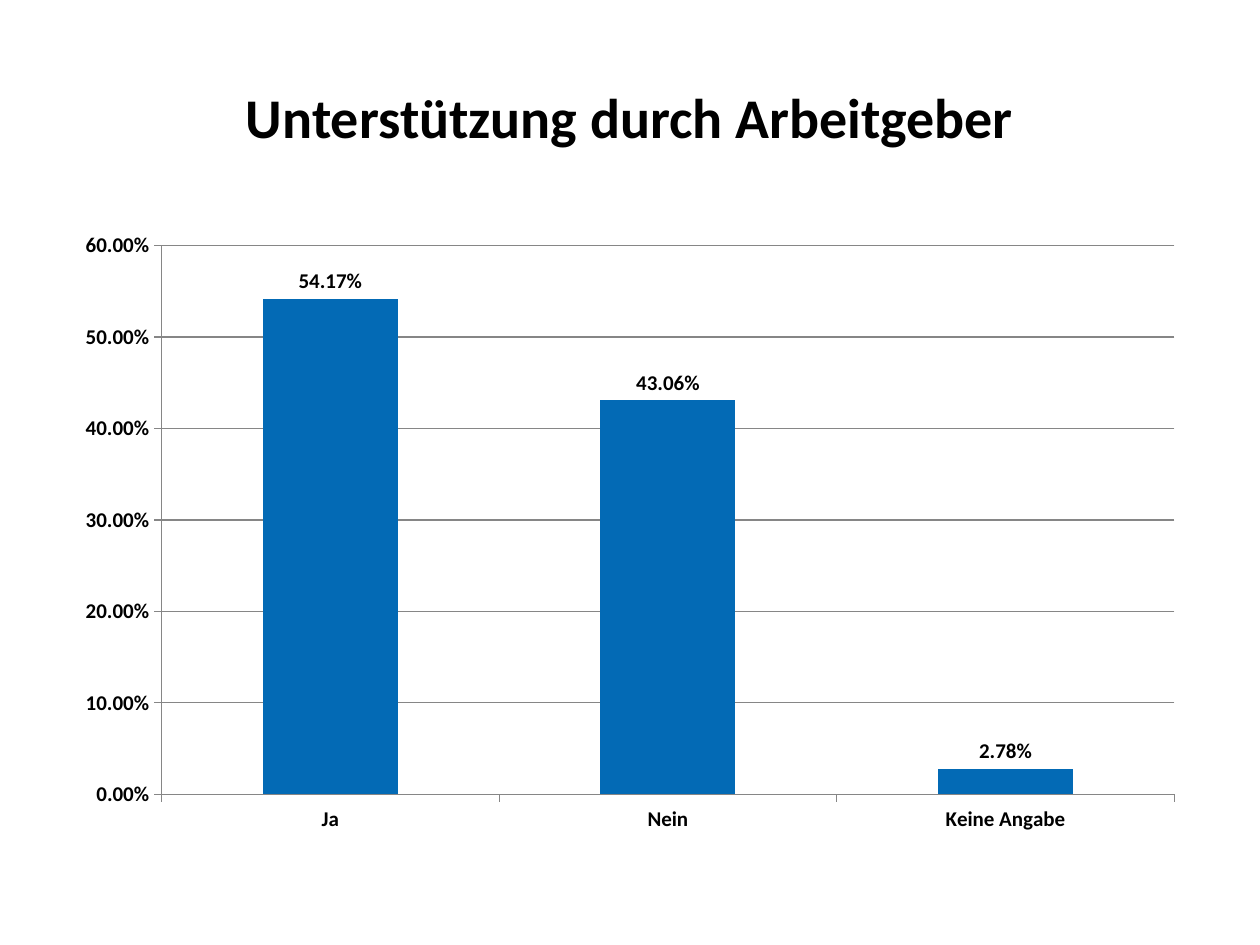
from typing import NamedTuple

import pptx
import pptx.chart.data
import pptx.dml.color
import pptx.enum.chart
import pptx.enum.text
import pptx.util

BLACK = pptx.dml.color.RGBColor(0x00, 0x00, 0x00)
BLUE = pptx.dml.color.RGBColor(0x03, 0x6A, 0xB5)
GREY = pptx.dml.color.RGBColor(0x86, 0x86, 0x86)
FONT = "Calibri"
PERCENT = "0.00%"
WIDTH = pptx.util.Inches(10)
HEIGHT = pptx.util.Inches(7.5)


class Area(NamedTuple):
    """Left, top, width and height as shares of the slide."""
    left: float
    top: float
    width: float
    height: float

    def lengths(self) -> tuple[int, ...]:
        return (round(self.left * WIDTH), round(self.top * HEIGHT),
                round(self.width * WIDTH), round(self.height * HEIGHT))


class Answer(NamedTuple):
    label: str
    share: float


HEADING_AREA = Area(0.05, 0.04, 0.9, 1 / 6)
CHART_AREA = Area(0.05, 7 / 30, 0.9, 0.66)
ANSWERS = [Answer("Ja", 0.5417), Answer("Nein", 0.4306),
           Answer("Keine Angabe", 0.0278)]


def style_font(font, size: int) -> None:
    font.name = FONT
    font.size = pptx.util.Pt(size)
    font.bold = True
    font.color.rgb = BLACK


def style_line(line) -> None:
    line.color.rgb = GREY
    line.width = pptx.util.Pt(0.75)


def add_heading(slide, text: str) -> None:
    heading = slide.shapes.title
    heading.left, heading.top, heading.width, heading.height = HEADING_AREA.lengths()
    heading.text_frame.text = text
    heading.text_frame.vertical_anchor = pptx.enum.text.MSO_ANCHOR.MIDDLE
    paragraph = heading.text_frame.paragraphs[0]
    paragraph.alignment = pptx.enum.text.PP_ALIGN.CENTER
    style_font(paragraph.font, 32)


def add_answer_chart(slide, answers: list[Answer]) -> None:
    data = pptx.chart.data.CategoryChartData(number_format=PERCENT)
    data.categories = [answer.label for answer in answers]
    data.add_series("Series 1", [answer.share for answer in answers])
    chart = slide.shapes.add_chart(
        pptx.enum.chart.XL_CHART_TYPE.COLUMN_CLUSTERED,
        *CHART_AREA.lengths(), data).chart
    chart.has_title = False
    chart.has_legend = False
    style_font(chart.font, 12)

    # Columns and their labels
    plot = chart.plots[0]
    plot.vary_by_categories = False
    plot.gap_width = 150
    columns = plot.series[0]
    columns.format.fill.solid()
    columns.format.fill.fore_color.rgb = BLUE
    labels = columns.data_labels
    labels.show_value = True
    labels.number_format = PERCENT
    labels.number_format_is_linked = False
    labels.position = pptx.enum.chart.XL_LABEL_POSITION.OUTSIDE_END
    style_font(labels.font, 12)

    # Axes and gridlines
    for axis in (chart.category_axis, chart.value_axis):
        axis.major_tick_mark = pptx.enum.chart.XL_TICK_MARK.OUTSIDE
        axis.minor_tick_mark = pptx.enum.chart.XL_TICK_MARK.NONE
        style_line(axis.format.line)
        style_font(axis.tick_labels.font, 12)
    shares = chart.value_axis
    shares.minimum_scale, shares.maximum_scale, shares.major_unit = 0, 0.6, 0.1
    shares.tick_labels.number_format = PERCENT
    shares.tick_labels.number_format_is_linked = False
    shares.has_major_gridlines = True
    style_line(shares.major_gridlines.format.line)


def main() -> None:
    deck = pptx.Presentation()
    deck.slide_width, deck.slide_height = WIDTH, HEIGHT
    slide = deck.slides.add_slide(deck.slide_layouts[5])  # title only
    add_heading(slide, "Unterstützung durch Arbeitgeber")
    add_answer_chart(slide, ANSWERS)
    deck.save("out.pptx")


if __name__ == "__main__":
    main()
